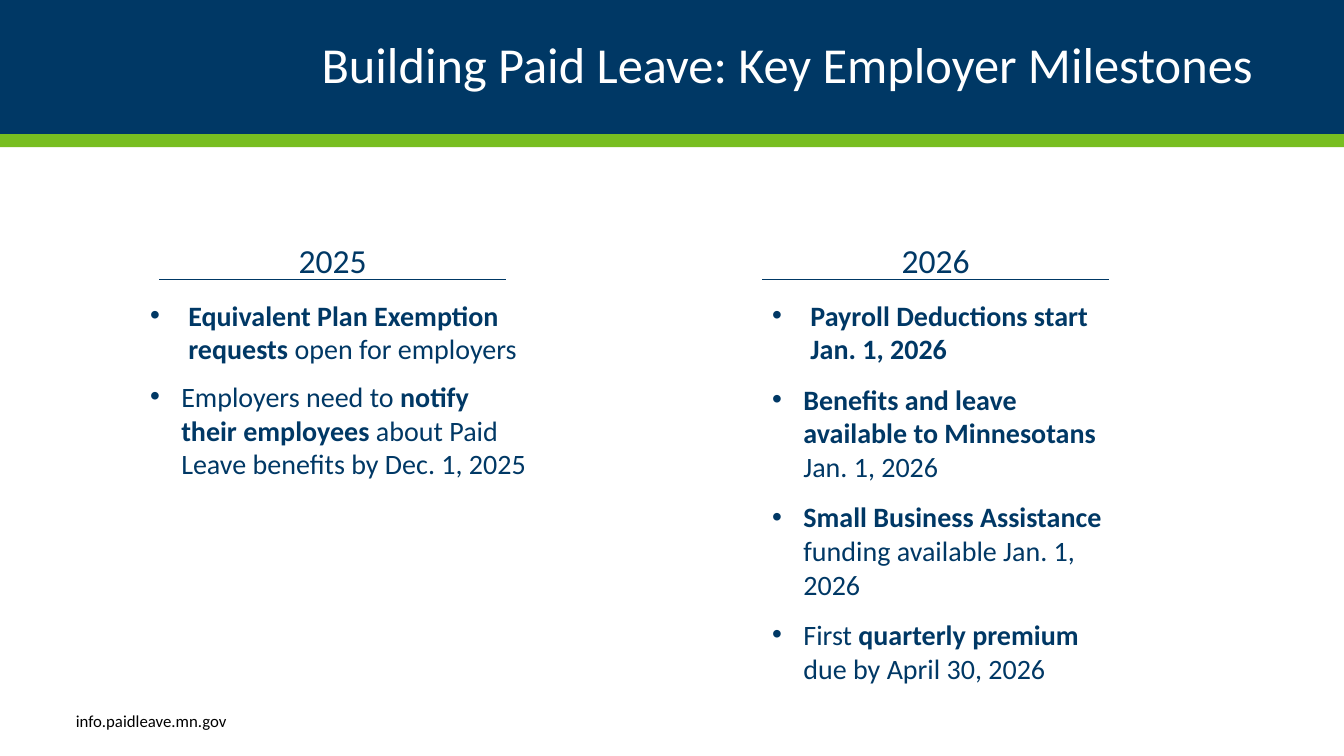
from pptx import Presentation
from pptx.dml.color import RGBColor
from pptx.enum.shapes import MSO_CONNECTOR as Connector, MSO_SHAPE as Shape
from pptx.enum.text import MSO_ANCHOR as Anchor, MSO_AUTO_SIZE as AutoSize, PP_ALIGN as Align
from pptx.oxml.ns import qn
from pptx.util import Inches, Pt
from lxml import etree

COLORS = {"navy": "003865", "green": "78BE21", "white": "FFFFFF", "black": "000000"}

MILESTONES = [
    {
        "year": "2025", "left": 1.58, "list_box": (1.39, 2.91, 3.94, 3.02), "space": 10,
        "items": [
            [("Equivalent Plan Exemption requests\u00a0", True), ("open for employers\u00a0", False)],
            [("Employers need to ", False), ("notify their employees", True),
             (" about Paid Leave benefits by Dec. 1, 2025", False)],
        ],
    },
    {
        "year": "2026", "left": 7.56, "list_box": (7.56, 2.91, 3.71, 3.96), "space": 12,
        "items": [
            [("Payroll Deductions\u00a0start Jan. 1, 2026", True)],
            [("Benefits and leave available to Minnesotans", True), (" Jan. 1, 2026", False)],
            [("Small Business Assistance", True), (" funding available Jan. 1, 2026", False)],
            [("First ", False), ("quarterly premium ", True), ("due by April 30, 2026", False)],
        ],
    },
]


class SlideBuilder:
    font = "Calibri"

    def __init__(self, slide):
        self.slide = slide

    def color(self, name):
        return RGBColor.from_string(COLORS[name])

    def add_run(self, paragraph, text, size, color="navy", bold=False):
        run = paragraph.add_run()
        run.text = text
        run.font.name = self.font
        run.font.size = Pt(size)
        run.font.bold = bold
        run.font.color.rgb = self.color(color)

    def title(self, text, width, height):
        shape = self.slide.shapes.title
        shape.left, shape.top = Inches(0), Inches(0)
        shape.width, shape.height = Inches(width), Inches(height)
        shape.fill.solid()
        shape.fill.fore_color.rgb = self.color("navy")
        frame = shape.text_frame
        frame.auto_size = AutoSize.NONE
        frame.word_wrap = True
        frame.vertical_anchor = Anchor.MIDDLE
        frame.margin_left = frame.margin_right = Inches(0.9)
        frame.margin_top = frame.margin_bottom = Inches(0.05)
        paragraph = frame.paragraphs[0]
        paragraph.alignment = Align.RIGHT
        paragraph.line_spacing = 0.9
        self.add_run(paragraph, text, 36, "white")

    def bar(self, box, color):
        shape = self.slide.shapes.add_shape(Shape.RECTANGLE, *map(Inches, box))
        shape.shadow.inherit = False
        shape.fill.solid()
        shape.fill.fore_color.rgb = self.color(color)
        shape.line.fill.background()

    def text_frame(self, box):
        frame = self.slide.shapes.add_textbox(*map(Inches, box)).text_frame
        frame.word_wrap = True
        return frame

    def label(self, box, text, size, color="navy", anchor=Anchor.TOP):
        frame = self.text_frame(box)
        frame.vertical_anchor = anchor
        paragraph = frame.paragraphs[0]
        paragraph.alignment = Align.CENTER
        self.add_run(paragraph, text, size, color)

    def bullet(self, paragraph, indent):
        properties = paragraph._p.get_or_add_pPr()
        properties.set("marL", str(Inches(indent)))
        properties.set("indent", str(-Inches(indent)))
        bullet_color = etree.SubElement(properties, qn("a:buClr"))
        etree.SubElement(bullet_color, qn("a:srgbClr"), val=COLORS["navy"])
        etree.SubElement(properties, qn("a:buFont"), typeface="Arial")
        etree.SubElement(properties, qn("a:buChar"), char="•")

    def bullet_list(self, box, items, space):
        frame = self.text_frame(box)
        for index, runs in enumerate(items):
            paragraph = frame.add_paragraph() if index else frame.paragraphs[0]
            paragraph.space_after = Pt(space)
            self.bullet(paragraph, 0.31 if index else 0.38)
            for text, bold in runs:
                self.add_run(paragraph, text, 20, bold=bold)

    def rule(self, left, top, width):
        line = self.slide.shapes.add_connector(
            Connector.STRAIGHT, Inches(left), Inches(top), Inches(left + width), Inches(top))
        line.line.color.rgb = self.color("navy")
        line.line.width = Pt(0.75)
        etree.SubElement(line._element.spPr, qn("a:effectLst"))


def main():
    presentation = Presentation()
    presentation.slide_width, presentation.slide_height = Inches(13.33), Inches(7.5)
    builder = SlideBuilder(presentation.slides.add_slide(presentation.slide_layouts[5]))
    builder.bar((0, 1.33, 13.33, 0.13), "green")
    builder.title("Building Paid Leave: Key Employer Milestones", 13.33, 1.33)
    for column in MILESTONES:
        builder.label((column["left"], 2.4, 3.44, 0.37), column["year"], 24, anchor=Anchor.MIDDLE)
        builder.bullet_list(column["list_box"], column["items"], column["space"])
        builder.rule(column["left"], 2.77, 3.44)
    builder.label((0, 7, 3, 0.3), "info.paidleave.mn.gov", 12, "black")
    presentation.save("out.pptx")


if __name__ == "__main__":
    main()
